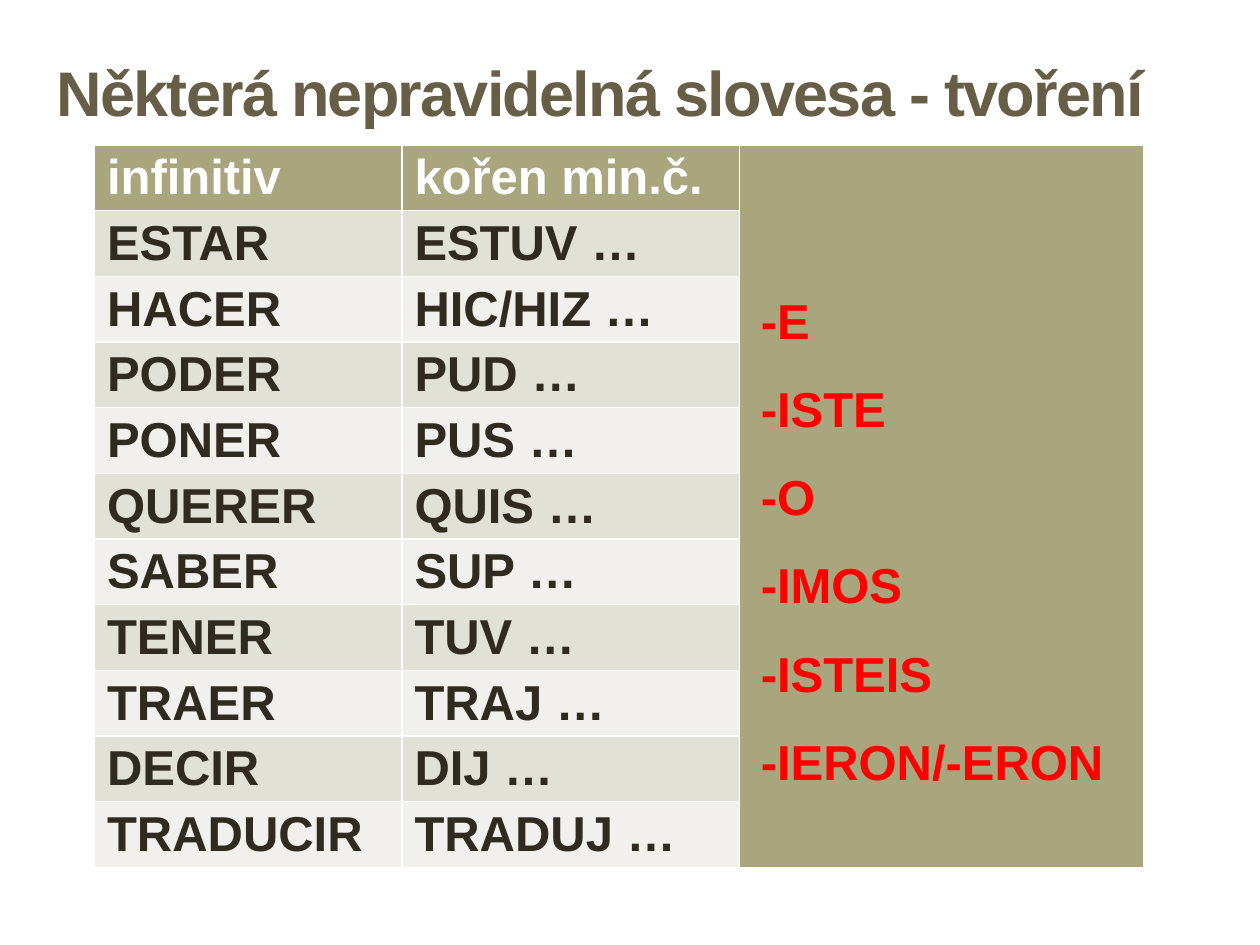
from pptx import Presentation
from pptx.dml.color import RGBColor
from pptx.enum.text import MSO_ANCHOR, PP_ALIGN
from pptx.util import Inches, Pt

BROWN = RGBColor(0x67, 0x5E, 0x47)
OLIVE = RGBColor(0xA9, 0xA5, 0x7C)
BANDS = RGBColor(0xF1, 0xF0, 0xEC), RGBColor(0xE2, 0xE1, 0xD7)
WHITE = RGBColor(0xFF, 0xFF, 0xFF)
DARK = RGBColor(0x2F, 0x2B, 0x20)
RED = RGBColor(0xFF, 0x00, 0x00)

COLS = 2.44, 2.68, 3.21
ROW = 0.51
VERBS = [
    ("infinitiv", "kořen min.č."),
    ("ESTAR", "ESTUV …"),
    ("HACER", "HIC/HIZ …"),
    ("PODER", "PUD …"),
    ("PONER", "PUS …"),
    ("QUERER", "QUIS …"),
    ("SABER", "SUP …"),
    ("TENER", "TUV …"),
    ("TRAER", "TRAJ …"),
    ("DECIR", "DIJ …"),
    ("TRADUCIR", "TRADUJ …"),
]
ENDS = ["-E", "-ISTE", "-O", "-IMOS", "-ISTEIS", "-IERON/-ERON"]


def add_run(para, text, color, size=28):
    """Add one bold run to a paragraph."""
    run = para.add_run()
    run.text = text
    font = run.font
    font.name, font.size, font.bold = "Arial", Pt(size), True
    font.color.rgb = color
    return run


def set_title(slide, text):
    """Place and fill the title."""
    title = slide.shapes.title
    title.left, title.top = Inches(0.2), Inches(0.29)
    title.width, title.height = Inches(9.13), Inches(0.87)
    frame = title.text_frame
    frame.vertical_anchor = MSO_ANCHOR.MIDDLE
    para = frame.paragraphs[0]
    para.alignment = PP_ALIGN.CENTER
    run = add_run(para, text, BROWN, 36)
    run.font._element.set("spc", "-100")


def fill_cell(cell, color):
    """Give a cell a solid fill and tight margins."""
    cell.fill.solid()
    cell.fill.fore_color.rgb = color
    cell.margin_top = cell.margin_bottom = Pt(3.15)


def add_verbs(slide):
    """Add the verb table with its merged last column."""
    count = len(VERBS)
    table = slide.shapes.add_table(
        count, len(COLS), Inches(0.75), Inches(1.15),
        Inches(sum(COLS)), Inches(ROW * count)).table
    for col, width in zip(table.columns, COLS):
        col.width = Inches(width)
    for i, words in enumerate(VERBS):
        table.rows[i].height = Inches(ROW)
        for j, word in enumerate(words):
            cell = table.cell(i, j)
            fill_cell(cell, BANDS[i % 2] if i else OLIVE)
            add_run(cell.text_frame.paragraphs[0], word, DARK if i else WHITE)
    side = table.cell(0, 2)
    side.merge(table.cell(count - 1, 2))
    fill_cell(side, OLIVE)


def add_ends(slide):
    """Add the list of endings over the last column."""
    box = slide.shapes.add_textbox(
        Inches(5.94), Inches(2.02), Inches(3.23), Inches(4.34))
    frame = box.text_frame
    frame.word_wrap = True
    for i, end in enumerate(ENDS):
        para = frame.add_paragraph() if i else frame.paragraphs[0]
        para.line_spacing = 1.5
        add_run(para, end, RED)


def main():
    """Build and save the slide."""
    deck = Presentation()
    deck.slide_width, deck.slide_height = Inches(10), Inches(7.5)
    slide = deck.slides.add_slide(deck.slide_layouts[5])
    set_title(slide, "Některá nepravidelná slovesa - tvoření")
    add_verbs(slide)
    add_ends(slide)
    deck.save("out.pptx")


if __name__ == "__main__":
    main()
